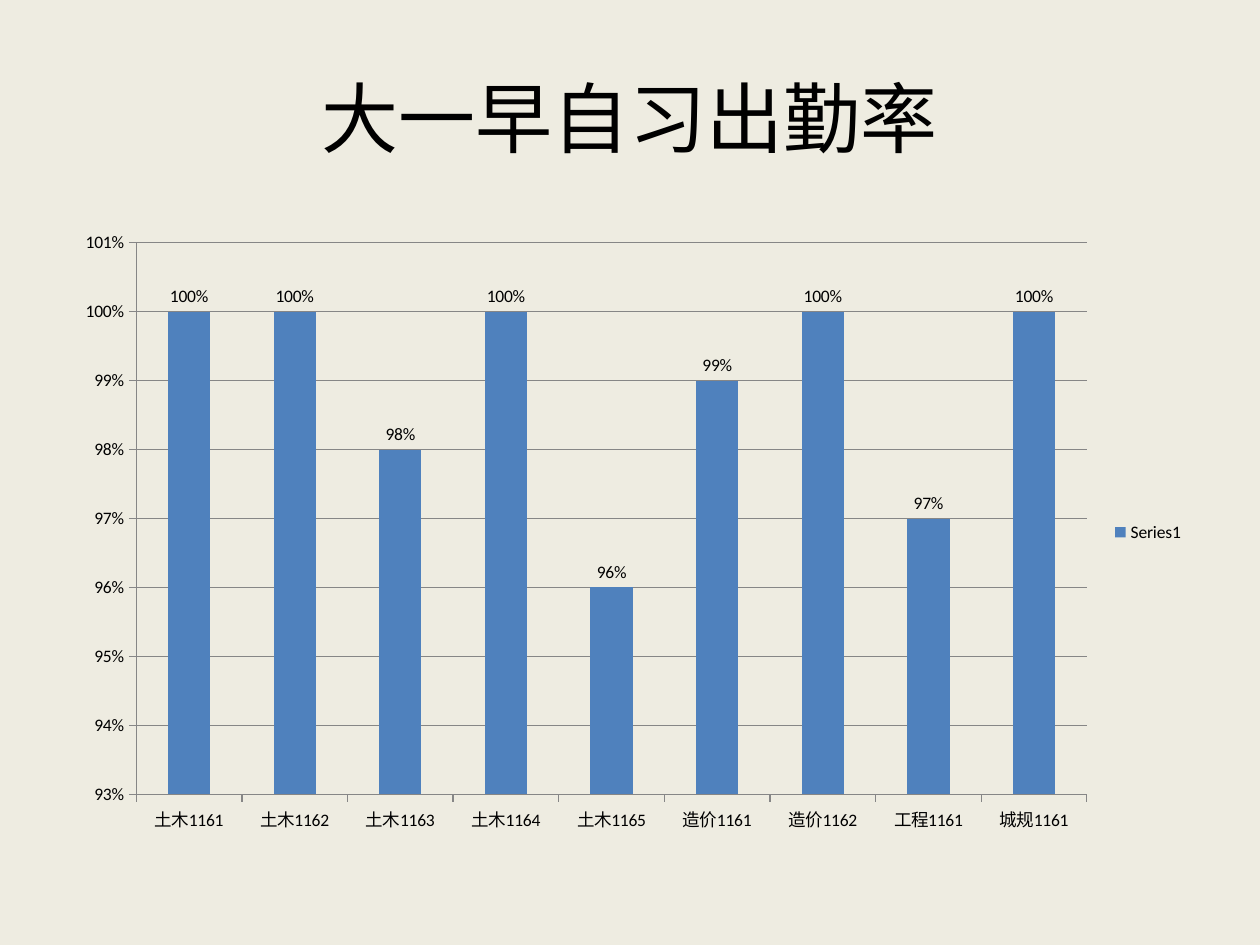
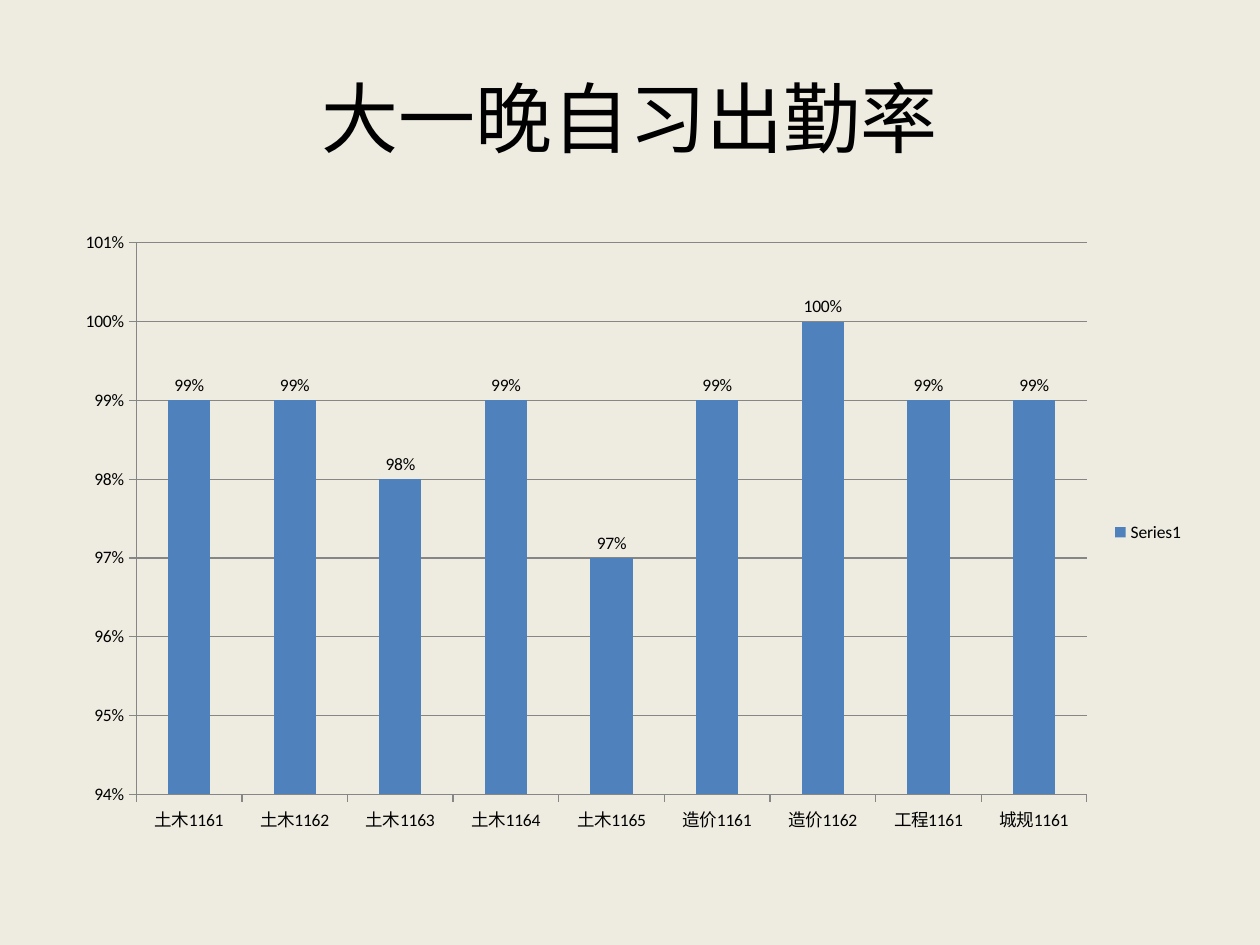
from dataclasses import dataclass

import pptx
import pptx.chart.data
import pptx.dml.color
import pptx.enum.chart
import pptx.enum.text
import pptx.util


@dataclass(frozen=True)
class Theme:
    background: str = "EEECE1"
    text: str = "000000"
    bars: str = "4F81BD"
    rules: str = "868686"
    font: str = "Calibri"
    title_size: int = 44
    chart_size: int = 10
    rule_width: float = 0.75


@dataclass(frozen=True)
class Area:
    """A region in shares of the slide's width and height."""
    left: float
    top: float
    width: float
    height: float

    def lengths(self) -> tuple[int, int, int, int]:
        return (int(SLIDE_WIDTH * self.left), int(SLIDE_HEIGHT * self.top),
                int(SLIDE_WIDTH * self.width), int(SLIDE_HEIGHT * self.height))


@dataclass(frozen=True)
class Attendance:
    title: str
    rates: tuple[float, ...]
    lowest: float


THEME = Theme()
SLIDE_WIDTH = pptx.util.Inches(10)
SLIDE_HEIGHT = pptx.util.Inches(7.5)
TITLE_AREA = Area(0.05, 0.04, 0.9, 1 / 6)
CHART_AREA = Area(0.05, 7 / 30, 0.9, 0.66)
HIGHEST = 1.01
STEP = 0.01
PERCENT = "0%"

CLASSES = ("土木1161", "土木1162", "土木1163", "土木1164", "土木1165",
           "造价1161", "造价1162", "工程1161", "城规1161")
SESSIONS = (
    Attendance("大一早自习出勤率",
               (1, 1, 0.98, 1, 0.96, 0.99, 1, 0.97, 1), 0.93),
    Attendance("大一晚自习出勤率",
               (0.99, 0.99, 0.98, 0.99, 0.97, 0.99, 1, 0.99, 0.99), 0.94),
)


def rgb(code: str) -> pptx.dml.color.RGBColor:
    return pptx.dml.color.RGBColor.from_string(code)


def style_font(font, size: int, color: str = THEME.text) -> None:
    font.name = THEME.font
    font.size = pptx.util.Pt(size)
    font.color.rgb = rgb(color)


def style_rule(line) -> None:
    line.color.rgb = rgb(THEME.rules)
    line.width = pptx.util.Pt(THEME.rule_width)


def add_text(slide, text: str, area: Area, *, size: int,
             color: str = THEME.text,
             align=pptx.enum.text.PP_ALIGN.CENTER,
             anchor=pptx.enum.text.MSO_ANCHOR.MIDDLE) -> None:
    frame = slide.shapes.add_textbox(*area.lengths()).text_frame
    frame.word_wrap = True
    frame.vertical_anchor = anchor
    paragraph = frame.paragraphs[0]
    paragraph.alignment = align
    run = paragraph.add_run()
    run.text = text
    style_font(run.font, size, color)


def add_attendance_chart(slide, session: Attendance) -> None:
    rates = pptx.chart.data.CategoryChartData(number_format=PERCENT)
    rates.categories = CLASSES
    rates.add_series("Series1", session.rates)
    chart = slide.shapes.add_chart(
        pptx.enum.chart.XL_CHART_TYPE.COLUMN_CLUSTERED,
        *CHART_AREA.lengths(), rates).chart
    style_font(chart.font, THEME.chart_size)
    chart.has_title = False
    chart.has_legend = True
    chart.legend.position = pptx.enum.chart.XL_LEGEND_POSITION.RIGHT
    chart.legend.include_in_layout = False

    for axis in (chart.category_axis, chart.value_axis):
        axis.major_tick_mark = pptx.enum.chart.XL_TICK_MARK.OUTSIDE
        axis.minor_tick_mark = pptx.enum.chart.XL_TICK_MARK.NONE
        style_rule(axis.format.line)

    scale = chart.value_axis
    scale.minimum_scale = session.lowest
    scale.maximum_scale = HIGHEST
    scale.major_unit = STEP
    scale.has_major_gridlines = True
    style_rule(scale.major_gridlines.format.line)
    scale.tick_labels.number_format = PERCENT
    scale.tick_labels.number_format_is_linked = False

    columns = chart.plots[0]
    columns.gap_width = 150
    columns.vary_by_categories = False
    bars = columns.series[0]
    bars.format.fill.solid()
    bars.format.fill.fore_color.rgb = rgb(THEME.bars)
    labels = bars.data_labels
    labels.show_value = True
    labels.number_format = PERCENT
    labels.number_format_is_linked = False
    labels.position = pptx.enum.chart.XL_LABEL_POSITION.OUTSIDE_END
    style_font(labels.font, THEME.chart_size)


def add_session(deck, session: Attendance) -> None:
    slide = deck.slides.add_slide(deck.slide_layouts[6])
    slide.background.fill.solid()
    slide.background.fill.fore_color.rgb = rgb(THEME.background)
    add_text(slide, session.title, TITLE_AREA, size=THEME.title_size)
    add_attendance_chart(slide, session)


def main() -> None:
    deck = pptx.Presentation()
    deck.slide_width = SLIDE_WIDTH
    deck.slide_height = SLIDE_HEIGHT
    for session in SESSIONS:
        add_session(deck, session)
    deck.save("out.pptx")


if __name__ == "__main__":
    main()
